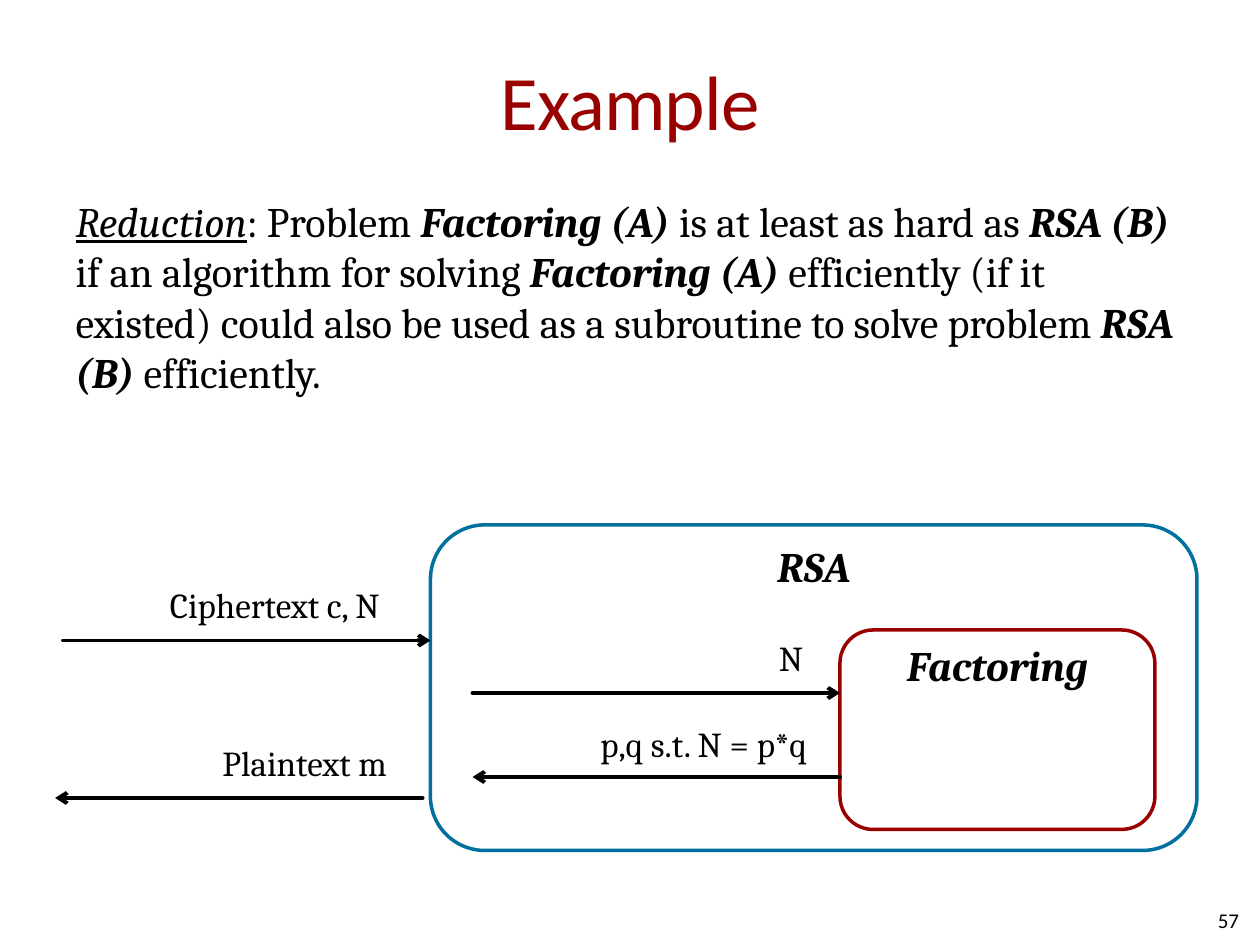
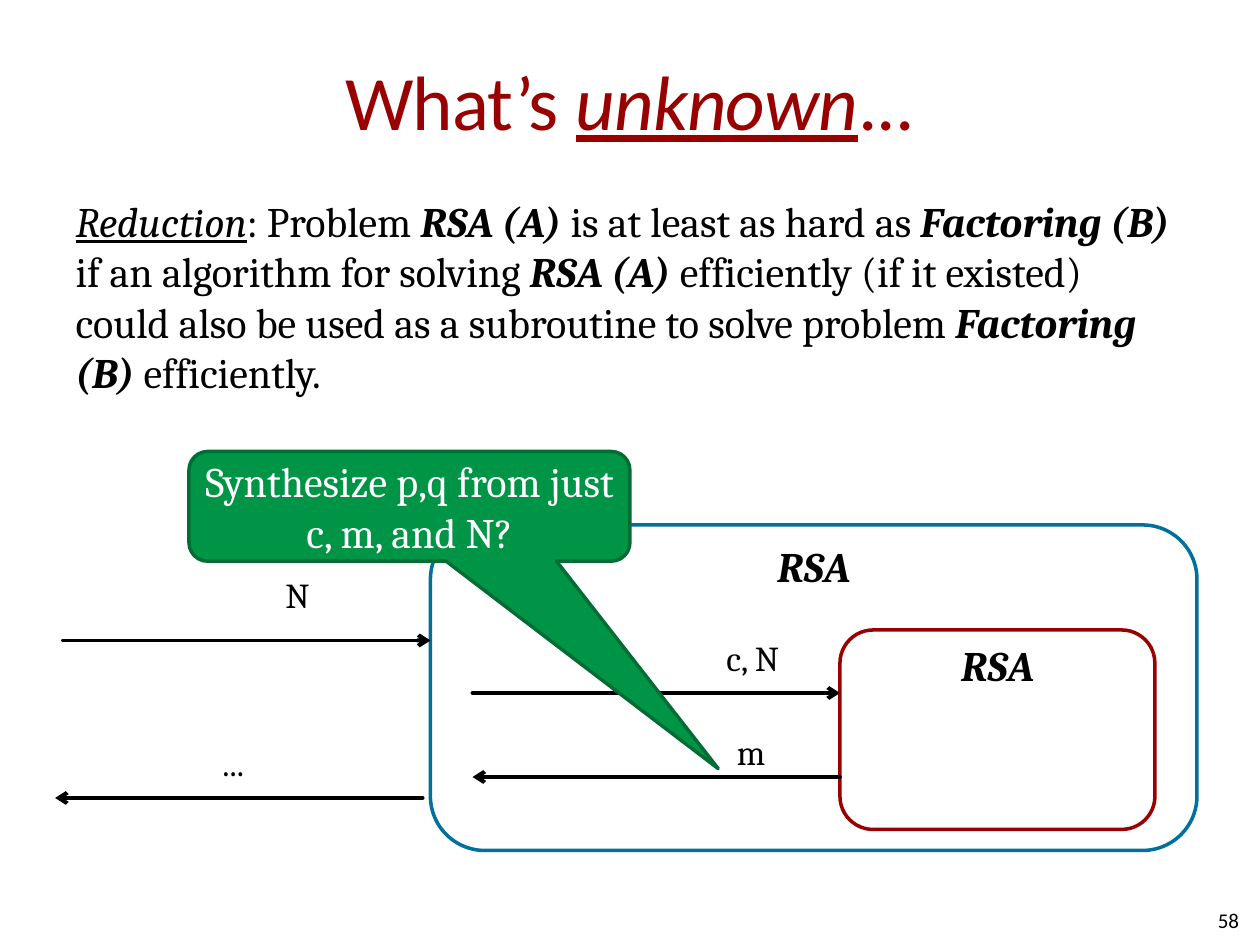
from lxml.etree import SubElement
from pptx import Presentation
from pptx.dml.color import RGBColor
from pptx.enum.shapes import MSO_CONNECTOR, MSO_SHAPE as Shape
from pptx.enum.text import MSO_ANCHOR as Anchor, MSO_AUTO_SIZE, PP_ALIGN as Align
from pptx.oxml.ns import qn
from pptx.util import Inches, Pt

COLORS = {
    "title": "990000",
    "text": "000000",
    "white": "FFFFFF",
    "outer": "00709E",
    "inner": "990000",
    "callout": "009446",
    "callout_edge": "006D34",
}
HEADING, SERIF = "Calibri", "Cambria"
WIDTH, HEIGHT = Inches(10), Inches(7.5)
COLUMNS, ROWS = 120, 90


def column(count):
    return round(WIDTH * count / COLUMNS)


def row(count):
    return round(HEIGHT * count / ROWS)


def area(left, top, width, height):
    return column(left), row(top), column(width), row(height)


def color(name):
    return RGBColor.from_string(COLORS[name])


def place(placeholder, left, top, width, height):
    placeholder.left, placeholder.top, placeholder.width, placeholder.height = area(
        left, top, width, height)


def set_margins(frame, side, end):
    frame.margin_left = frame.margin_right = Inches(side)
    frame.margin_top = frame.margin_bottom = Inches(end)


def write(frame, parts, size, font=SERIF, ink="text", align=Align.LEFT, style=""):
    paragraph = frame.paragraphs[0]
    paragraph.alignment = align
    paragraph.font.name = font
    paragraph.font.size = Pt(size)
    paragraph.font.color.rgb = color(ink)
    if style:
        paragraph.font.bold = "b" in style
        paragraph.font.italic = "i" in style
    for words, emphasis in parts:
        run = paragraph.add_run()
        run.text = words
        if emphasis:
            run.font.bold = "b" in emphasis
            run.font.italic = "i" in emphasis
            run.font.underline = "u" in emphasis
    return paragraph


def add_title(slide, parts):
    title = slide.shapes.title
    place(title, 6, 2, 108, 15)
    frame = title.text_frame
    frame.vertical_anchor = Anchor.MIDDLE
    set_margins(frame, 0, 0.05)
    heading = write(frame, parts, 44, HEADING, "title", Align.CENTER)
    heading._p.get_or_add_pPr().get_or_add_defRPr().set("spc", "-50")


def add_reduction(slide, harder, easier):
    body = slide.placeholders[1]
    place(body, 6, 18, 108, 62.4)
    body.text_frame.auto_size = MSO_AUTO_SIZE.NONE
    definition = write(body.text_frame, [
        ("Reduction", "iu"),
        (": Problem ", ""),
        (harder, "bi"),
        (" is at least as hard as ", ""),
        (easier, "bi"),
        (" if an algorithm for solving ", ""),
        (harder, "bi"),
        (" efficiently (if it existed) could also be used as a subroutine"
         " to solve problem ", ""),
        (easier, "bi"),
        (" efficiently.", ""),
    ], 24)
    definition.space_before = Pt(4.8)
    properties = definition._p.get_or_add_pPr()
    properties.set("marL", "0")
    properties.set("indent", "0")
    properties.insert_element_before(
        properties.makeelement(qn("a:buNone")), "a:tabLst", "a:defRPr", "a:extLst")


def add_page_number(slide, number):
    frame = slide.shapes.add_textbox(*area(90, 85.2, 28, 4.8)).text_frame
    frame.word_wrap = True
    frame.vertical_anchor = Anchor.MIDDLE
    set_margins(frame, 0, 0)
    write(frame, [(str(number), "")], 12, HEADING, align=Align.RIGHT)


def add_box(slide, kind, bounds, words, edge, fill=None, ink="text", style="bi",
            anchor=Anchor.TOP):
    box = slide.shapes.add_shape(kind, *area(*bounds))
    box.shadow.inherit = False
    if fill:
        box.fill.solid()
        box.fill.fore_color.rgb = color(fill)
    else:
        box.fill.background()
    box.line.color.rgb = color(edge)
    box.line.width = Pt(2)
    frame = box.text_frame
    frame.word_wrap = True
    frame.vertical_anchor = anchor
    set_margins(frame, 0, 0)
    write(frame, [(words, "")], 24, ink=ink, align=Align.CENTER, style=style)
    return box


def add_arrow(slide, start, end, level):
    arrow = slide.shapes.add_connector(
        MSO_CONNECTOR.STRAIGHT, column(start), row(level), column(end), row(level))
    arrow.line.color.rgb = color("text")
    arrow.line.width = Pt(2.25)
    line = arrow.line._get_or_add_ln()
    line.set("cap", "rnd")
    SubElement(line, qn("a:tailEnd"), type="arrow")
    SubElement(arrow._element.spPr, qn("a:effectLst"))


def add_message(slide, words, left, top, width=12):
    frame = slide.shapes.add_textbox(*area(left, top, width, 6)).text_frame
    frame.word_wrap = True
    write(frame, [(words, "")], 20)


def add_diagram(slide, subroutine, messages):
    add_box(slide, Shape.ROUNDED_RECTANGLE, (80, 60, 30, 19), subroutine, "inner", "white")
    add_box(slide, Shape.ROUNDED_RECTANGLE, (41, 50, 73, 31), "RSA", "outer")
    for start, end, level in [(6, 41, 61), (45, 80, 66), (80, 45, 74), (40.25, 5.25, 76)]:
        add_arrow(slide, start, end, level)
    for message in messages:
        add_message(slide, *message)


def add_callout(slide, words):
    callout = add_box(slide, Shape.ROUNDED_RECTANGULAR_CALLOUT, (18, 43, 42, 10.45), words,
                      "callout_edge", "callout", "white", "", Anchor.MIDDLE)
    for index, value in enumerate([0.7, 2.39, 0.17]):
        callout.adjustments[index] = value


def add_slide(deck, number, title, harder, easier, subroutine, messages):
    slide = deck.slides.add_slide(deck.slide_layouts[1])
    add_title(slide, title)
    add_reduction(slide, harder, easier)
    add_page_number(slide, number)
    add_diagram(slide, subroutine, messages)
    return slide


def main():
    deck = Presentation()
    deck.slide_width, deck.slide_height = WIDTH, HEIGHT
    add_slide(deck, 57, [("Example", "")], "Factoring (A)", "RSA (B)", "Factoring", [
        ("Ciphertext c, N", 15, 55, 24),
        ("N", 73, 60, 6),
        ("p,q s.t. N = p*q", 56, 68.25, 24),
        ("Plaintext m", 20, 70, 20),
    ])
    unknown = add_slide(
        deck, 58, [("What’s ", ""), ("unknown", "iu"), ("...", "")],
        "RSA (A)", "Factoring (B)", "RSA", [
            ("N", 26, 54),
            ("c, N", 68, 60),
            ("m", 69, 69),
            ("...", 20, 70),
        ])
    add_callout(unknown, "Synthesize p,q from just c, m, and N?")
    deck.save("out.pptx")


if __name__ == "__main__":
    main()
